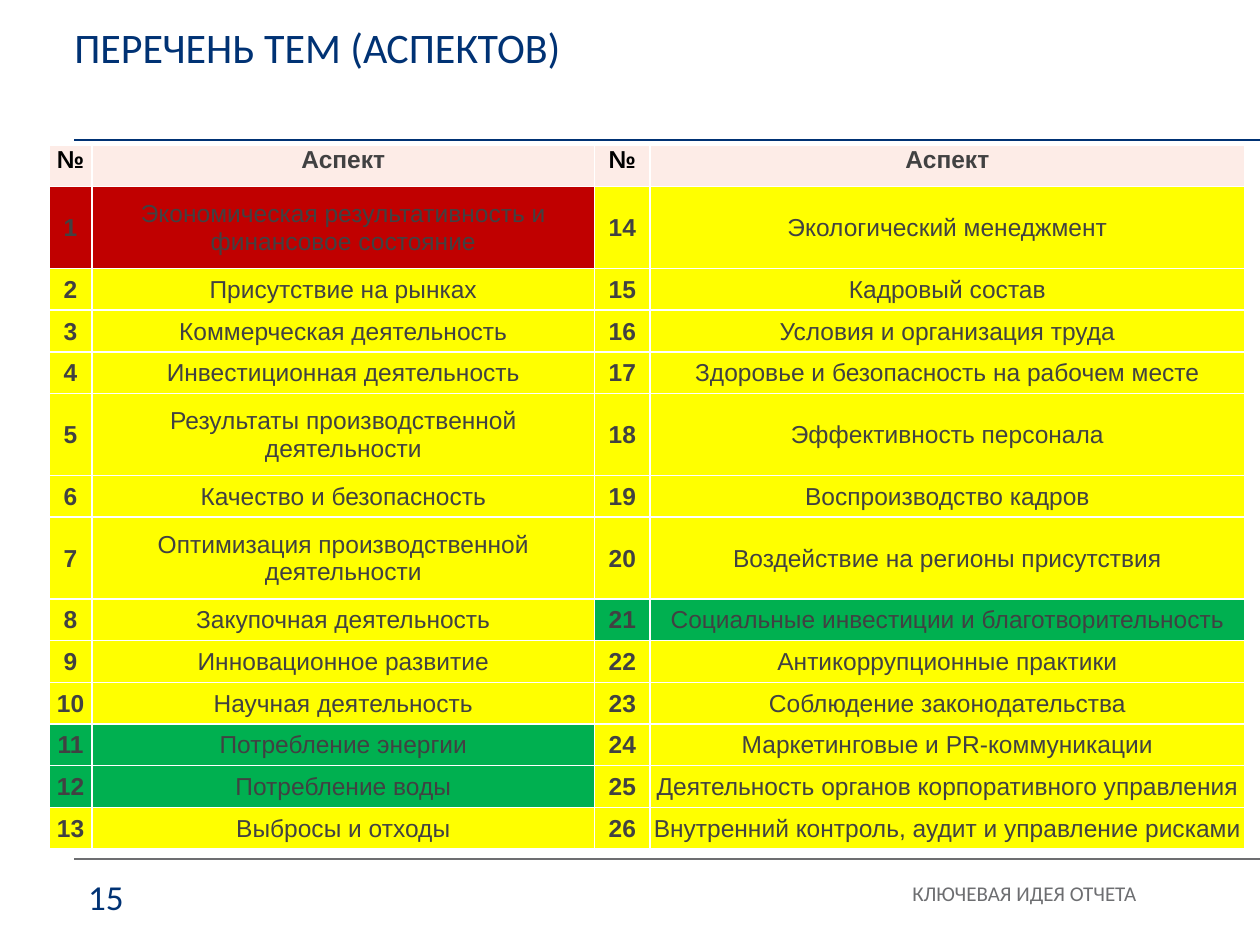
import pptx
import pptx.dml.color
import pptx.enum.shapes
import pptx.enum.text
import pptx.oxml
import pptx.oxml.ns
import pptx.util
import lxml.etree

ALIGN = pptx.enum.text.PP_ALIGN
ANCHOR = pptx.enum.text.MSO_ANCHOR
NAVY, GREY, TEXT, BLACK, WHITE = "003274", "6D6E71", "414142", "000000", "FFFFFF"
HEADER, YELLOW, RED, GREEN = "FDECE7", "FFFF00", "C00000", "00B050"

ASPECTS = [
    "Экономическая результативность и финансовое состояние",
    "Присутствие на рынках",
    "Коммерческая деятельность",
    "Инвестиционная деятельность",
    "Результаты производственной деятельности",
    "Качество и безопасность",
    "Оптимизация производственной деятельности",
    "Закупочная деятельность",
    "Инновационное развитие",
    "Научная деятельность",
    "Потребление энергии",
    "Потребление воды",
    "Выбросы и отходы",
    "Экологический менеджмент",
    "Кадровый состав",
    "Условия и организация труда",
    "Здоровье и безопасность на рабочем месте",
    "Эффективность персонала",
    "Воспроизводство кадров",
    "Воздействие на регионы присутствия",
    "Социальные инвестиции и благотворительность",
    "Антикоррупционные практики",
    "Соблюдение законодательства",
    "Маркетинговые и PR-коммуникации",
    "Деятельность органов корпоративного управления",
    "Внутренний контроль, аудит и управление рисками",
]
SPECIAL_FILLS = {1: RED, 11: GREEN, 12: GREEN, 21: GREEN}
TALL_ROWS = {1, 5, 7}


def color(value):
    return pptx.dml.color.RGBColor.from_string(value)


class SlideBuilder:
    columns, rows = 100, 75
    heading_font, table_font = "Calibri", "Arial"

    def __init__(self, presentation):
        self.unit_x = presentation.slide_width / self.columns
        self.unit_y = presentation.slide_height / self.rows
        self.slide = presentation.slides.add_slide(presentation.slide_layouts[1])

    def across(self, columns):
        return round(columns * self.unit_x)

    def down(self, rows):
        return round(rows * self.unit_y)

    def area(self, left, top, width, height):
        return self.across(left), self.down(top), self.across(width), self.down(height)

    def add_text(self, frame, text, size, shade, font, align, bold=False):
        paragraph = frame.paragraphs[0]
        paragraph.alignment = align
        run = paragraph.add_run()
        run.text = text
        run.font.size = pptx.util.Pt(size)
        run.font.name = font
        run.font.bold = bold
        run.font.color.rgb = color(shade)
        return paragraph

    def placeholder(self, index, area, text, size, shade, align, inset=0):
        shape = self.slide.placeholders[index]
        shape.left, shape.top, shape.width, shape.height = self.area(*area)
        frame = shape.text_frame
        frame.word_wrap = True
        frame.auto_size = pptx.enum.text.MSO_AUTO_SIZE.NONE
        frame.vertical_anchor = ANCHOR.TOP
        frame.margin_left = frame.margin_right = 0
        frame.margin_top = frame.margin_bottom = self.down(inset)
        properties = frame.paragraphs[0]._p.get_or_add_pPr()
        properties.set("marL", "0")
        properties.set("indent", "0")
        lxml.etree.SubElement(properties, pptx.oxml.ns.qn("a:buNone"))
        paragraph = self.add_text(frame, text, size, shade, self.heading_font, align)
        paragraph.space_before = pptx.util.Pt(0)
        return paragraph

    def text_box(self, area, text, size, shade, align):
        frame = self.slide.shapes.add_textbox(*self.area(*area)).text_frame
        frame.word_wrap = True
        self.add_text(frame, text, size, shade, self.heading_font, align)

    def rule(self, left, row, shade):
        line = self.slide.shapes.add_connector(
            pptx.enum.shapes.MSO_CONNECTOR.STRAIGHT,
            self.across(left), self.down(row), self.across(self.columns), self.down(row))
        line.line.color.rgb = color(shade)
        line.line.width = pptx.util.Pt(1)
        lxml.etree.SubElement(line._element.spPr, pptx.oxml.ns.qn("a:effectLst"))

    def table(self, left, top, widths, heights):
        area = self.area(left, top, sum(widths), sum(heights))
        table = self.slide.shapes.add_table(len(heights), len(widths), *area).table
        table.first_row = table.horz_banding = False
        for column, width in zip(table.columns, widths):
            column.width = self.across(width)
        for row, height in zip(table.rows, heights):
            row.height = self.down(height)
        return table

    def cell(self, cell, text, fill, shade=TEXT, bold=False, anchor=ANCHOR.MIDDLE):
        cell.margin_left = cell.margin_right = self.across(0.1)
        cell.margin_top, cell.margin_bottom = self.down(0.1), 0
        cell.vertical_anchor = anchor
        properties = cell._tc.get_or_add_tcPr()
        for side in "LRTB":
            properties.append(pptx.oxml.parse_xml(
                f'<a:ln{side} {pptx.oxml.ns.nsdecls("a")} w="{pptx.util.Pt(1)}"><a:solidFill>'
                f'<a:srgbClr val="{WHITE}"/></a:solidFill></a:ln{side}>'))
        cell.fill.solid()
        cell.fill.fore_color.rgb = color(fill)
        self.add_text(cell.text_frame, text, 14, shade, self.table_font, ALIGN.CENTER, bold)

    def aspect_table(self, left, top, widths):
        half = len(ASPECTS) // 2
        heights = [6.5 if row in TALL_ROWS else 3.31 for row in range(half + 1)]
        table = self.table(left, top, widths, heights)
        for column in (0, 2):
            self.cell(table.cell(0, column), "№", HEADER, BLACK, True, ANCHOR.TOP)
            self.cell(table.cell(0, column + 1), "Аспект", HEADER, TEXT, True, ANCHOR.TOP)
        for index, aspect in enumerate(ASPECTS):
            block, row = divmod(index, half)
            fill = SPECIAL_FILLS.get(index + 1, YELLOW)
            self.cell(table.cell(row + 1, 2 * block), str(index + 1), fill, bold=True)
            self.cell(table.cell(row + 1, 2 * block + 1), aspect, fill)


def main():
    presentation = pptx.Presentation()
    presentation.slide_width = pptx.util.Inches(10)
    presentation.slide_height = pptx.util.Inches(7.5)
    builder = SlideBuilder(presentation)
    builder.text_box((3.7, 69, 7.1, 3.9), "15", 20, NAVY, ALIGN.RIGHT)
    builder.rule(5.9, 11.1, NAVY)
    builder.rule(5.9, 68.2, GREY)
    footer = builder.placeholder(1, (33.5, 70.1, 56.7, 4.6), "КЛЮЧЕВАЯ ИДЕЯ ОТЧЕТА",
                                 12, GREY, ALIGN.RIGHT)
    footer.line_spacing = pptx.util.Pt(13)
    builder.aspect_table(3.9, 11.5, [3.4, 39.9, 4.4, 47.2])
    builder.placeholder(0, (5.9, 1.3, 90, 9.4), "ПЕРЕЧЕНЬ ТЕМ (АСПЕКТОВ)",
                        24, NAVY, ALIGN.LEFT, 0.4)
    presentation.save("out.pptx")


if __name__ == "__main__":
    main()
